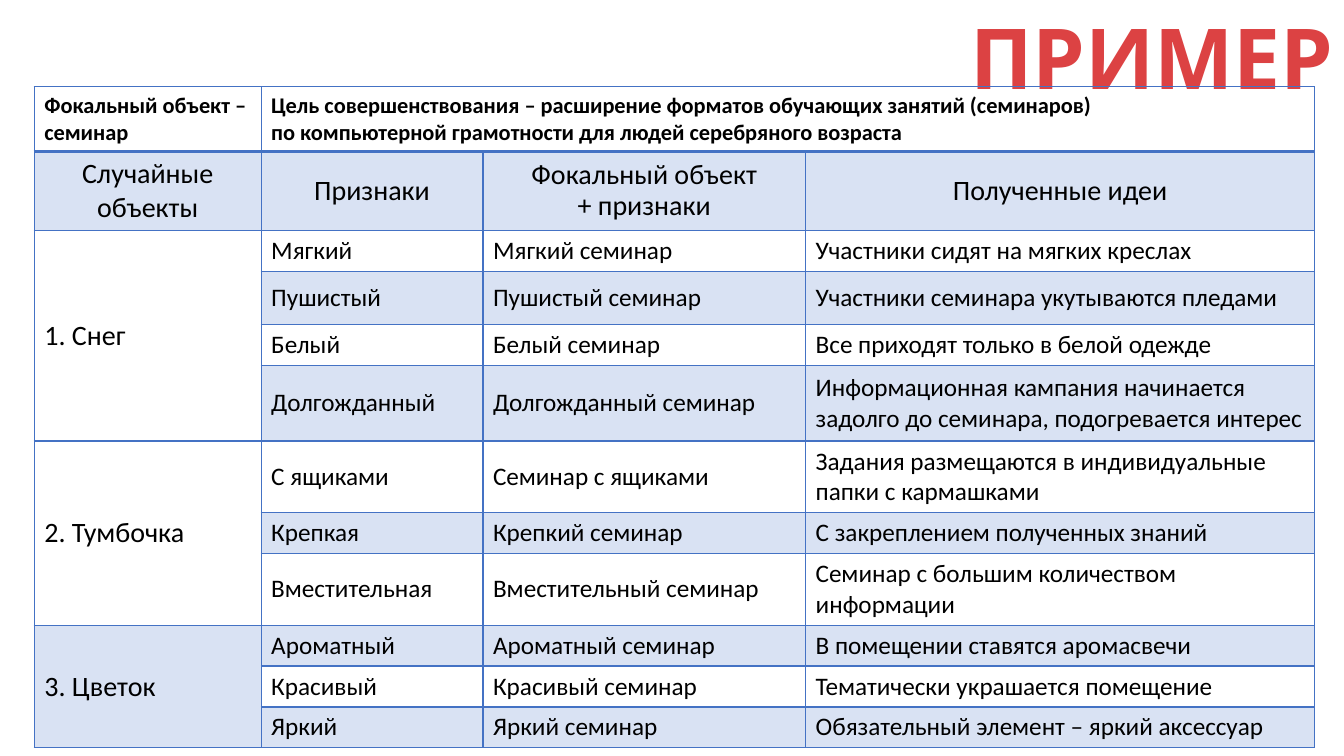
from lxml import etree
from pptx import Presentation
from pptx import util as u
from pptx.dml.color import RGBColor
from pptx.enum import text
from pptx.oxml import ns

BLACK, RED, BLUE = "000000", "DC4243", "4472C4"
COLUMNS = [2.25, 2.2, 3.2, 5.05]
ROWS = [0.48, 0.58, 0.3, 0.53, 0.3, 0.75, 0.53, 0.3, 0.53, 0.3, 0.3, 0.3]
FOCUS = "Фокальный объект – семинар"
GOAL = ("Цель совершенствования – расширение форматов обучающих занятий (семинаров)\n"
        "по компьютерной грамотности для людей серебряного возраста")
HEADINGS = [["Случайные объекты"], ["Признаки"],
            ["Фокальный объект", "+ признаки"], ["Полученные идеи"]]
OBJECTS = {
    "1. Снег": [
        ("Мягкий", "Мягкий семинар", "Участники сидят на мягких креслах"),
        ("Пушистый", "Пушистый семинар", "Участники семинара укутываются пледами"),
        ("Белый", "Белый семинар", "Все приходят только в белой одежде"),
        ("Долгожданный", "Долгожданный семинар",
         "Информационная кампания начинается задолго до семинара, подогревается интерес"),
    ],
    "2. Тумбочка": [
        ("С ящиками", "Семинар с ящиками",
         "Задания размещаются в индивидуальные папки с кармашками"),
        ("Крепкая", "Крепкий семинар", "С закреплением полученных знаний"),
        ("Вместительная", "Вместительный семинар",
         "Семинар с большим количеством информации"),
    ],
    "3. Цветок": [
        ("Ароматный", "Ароматный семинар", "В помещении ставятся аромасвечи"),
        ("Красивый", "Красивый семинар", "Тематически украшается помещение"),
        ("Яркий", "Яркий семинар", "Обязательный элемент – яркий аксессуар"),
    ],
}


def rgb(color):
    return RGBColor.from_string(color)


def write(p, words, size, color=BLACK, font="Calibri", bold=False):
    """Add the words as runs, with a line break at each newline."""
    for i, line in enumerate(words.split("\n")):
        if i:
            p.add_line_break()
        r = p.add_run()
        r.text = line
        r.font.size, r.font.name, r.font.bold = u.Pt(size), font, bold
        r.font.color.rgb = rgb(color)


def add_title(s, words):
    title = s.shapes.title
    title.left, title.top = u.Inches(1.83), u.Inches(0.1)
    title.width, title.height = u.Inches(11.5), u.Inches(1.03)
    tf = title.text_frame
    tf.auto_size = text.MSO_AUTO_SIZE.NONE
    tf.vertical_anchor = text.MSO_ANCHOR.MIDDLE
    p = tf.paragraphs[0]
    p.alignment, p.line_spacing = text.PP_ALIGN.RIGHT, 0.9
    write(p, words, 60, RED, "Karla", True)


def format_cell(cell, row):
    """Draw the borders and give odd rows a pale band."""
    tc_pr = cell._tc.get_or_add_tcPr()
    for side in "LRTB":
        thick = (row, side) in [(0, "B"), (1, "T")]
        ln = etree.SubElement(tc_pr, ns.qn(f"a:ln{side}"), w=str(u.Pt(2 if thick else 1)))
        fill = etree.SubElement(ln, ns.qn("a:solidFill"))
        etree.SubElement(fill, ns.qn("a:srgbClr"), val=BLUE)
    if row % 2:
        cell.fill.solid()
        cell.fill.fore_color.rgb = rgb(BLUE)
        color = tc_pr.find(ns.qn("a:solidFill")).find(ns.qn("a:srgbClr"))
        etree.SubElement(color, ns.qn("a:alpha"), val="20000")
    else:
        cell.fill.background()


def fill_cell(cell, paragraphs, size, bold=False, centred=False, middle=True):
    if middle:
        cell.vertical_anchor = text.MSO_ANCHOR.MIDDLE
    tf = cell.text_frame
    for i, words in enumerate(paragraphs):
        p = tf.add_paragraph() if i else tf.paragraphs[0]
        if centred:
            p.alignment = text.PP_ALIGN.CENTER
        if len(paragraphs) > 1:
            p.line_spacing = 0.9
        write(p, words, size, bold=bold)


def add_ideas_table(s):
    frame = s.shapes.add_table(len(ROWS), len(COLUMNS), u.Inches(0.34), u.Inches(0.86),
                               u.Inches(12.69), u.Inches(6.48))
    table = frame.table
    table.first_row = table.horz_banding = False
    for column, width in zip(table.columns, COLUMNS):
        column.width = u.Inches(width)
    for i, height in enumerate(ROWS):
        table.rows[i].height = u.Inches(height)
        for cell in table.rows[i].cells:
            format_cell(cell, i)
    frame.height = u.Inches(6.48)

    table.cell(0, 1).merge(table.cell(0, 3))
    for column, words in enumerate([FOCUS, GOAL]):
        fill_cell(table.cell(0, column), [words], 16, bold=True, middle=False)
    for column, paragraphs in enumerate(HEADINGS):
        fill_cell(table.cell(1, column), paragraphs, 20, centred=True)

    row = 2
    for name, ideas in OBJECTS.items():
        table.cell(row, 0).merge(table.cell(row + len(ideas) - 1, 0))
        fill_cell(table.cell(row, 0), [name], 20)
        for idea in ideas:
            for column, words in enumerate(idea, 1):
                fill_cell(table.cell(row, column), [words], 18)
            row += 1


def main():
    prs = Presentation()
    prs.slide_width, prs.slide_height = u.Inches(13.33), u.Inches(7.5)
    s = prs.slides.add_slide(prs.slide_layouts[5])
    add_title(s, "ПРИМЕР")
    add_ideas_table(s)
    prs.save("out.pptx")


if __name__ == "__main__":
    main()
